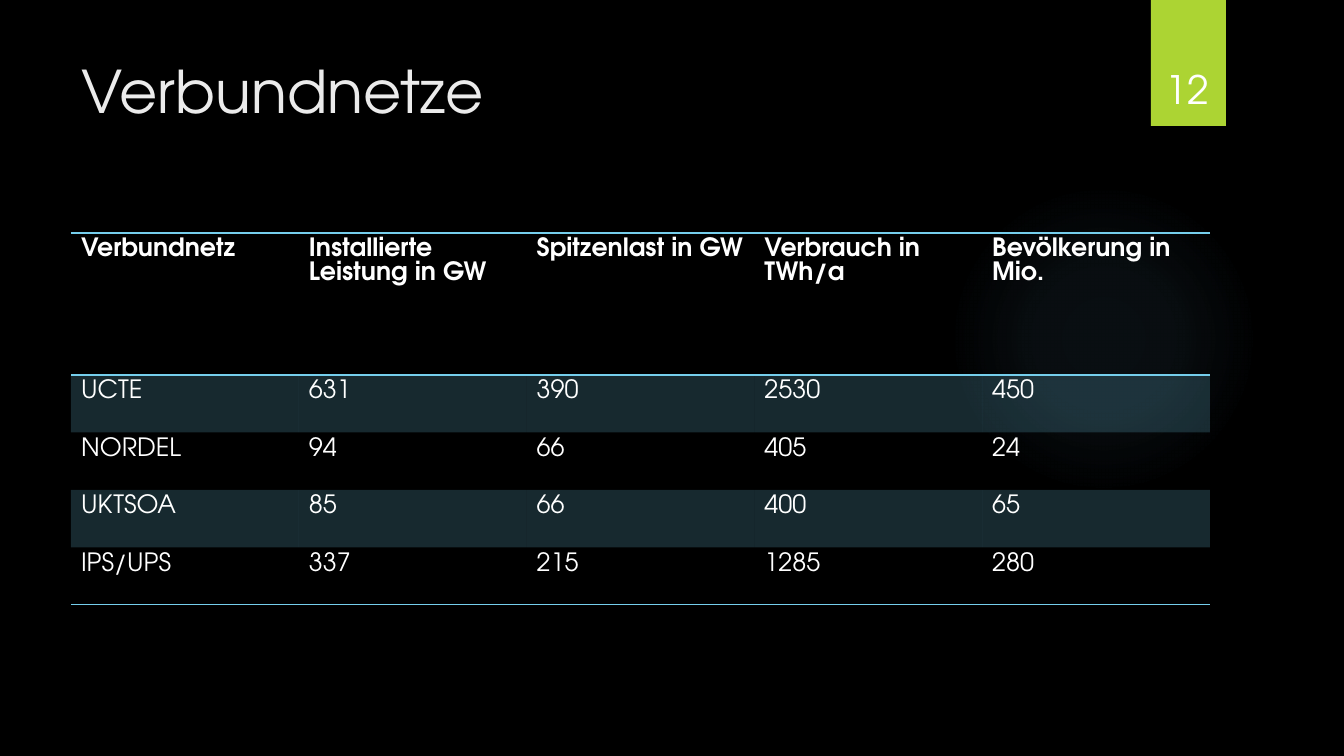
from lxml import etree
from pptx import Presentation, util as u
from pptx.dml.color import RGBColor
from pptx.enum import shapes, text
from pptx.oxml import parse_xml
from pptx.oxml.ns import nsdecls, qn

PX = 914400 / 100.8
FONT = "TeX Gyre Adventor"
ACCENT, WHITE = "75CEEC", "FFFFFF"
NO_GRID = "{2D5ABB26-0587-4C30-8999-92F81FD0307C}"
ROWS = [
    ["Verbundnetz", "Installierte Leistung in GW", "Spitzenlast in GW",
     "Verbrauch in TWh/a", "Bevölkerung in Mio."],
    ["UCTE", "631", "390", "2530", "450"],
    ["NORDEL", "94", "66", "405", "24"],
    ["UKTSOA", "85", "66", "400", "65"],
    ["IPS/UPS", "337", "215", "1285", "280"],
]


def px(n):
    return u.Emu(round(n * PX))


def rgb(color):
    return RGBColor.from_string(color)


def write(tf, words, size, color, bold=False, align=text.PP_ALIGN.LEFT):
    tf.word_wrap = True
    p = tf.paragraphs[0]
    p.alignment = align
    r = p.add_run()
    r.text = words
    for name, value in {"name": FONT, "size": u.Pt(size), "bold": bold}.items():
        setattr(r.font, name, value)
    r.font.color.rgb = rgb(color)


def add_plain_shape(s, kind, box):
    sp = s.shapes.add_shape(kind, *map(px, box))
    sp.shadow.inherit = False
    sp.line.fill.background()
    return sp


def add_glow(s, box):
    sp = add_plain_shape(s, shapes.MSO_SHAPE.OVAL, box)
    stops = "".join(
        f'<a:gs pos="{pos}000"><a:srgbClr val="7AC4F0">'
        f'<a:alpha val="{alpha}000"/></a:srgbClr></a:gs>'
        for pos, alpha in [(0, 7), (36, 6), (69, 0), (100, 0)])
    grad = parse_xml(
        f'<a:gradFill {nsdecls("a")} rotWithShape="1"><a:gsLst>{stops}</a:gsLst>'
        '<a:path path="circle"><a:fillToRect l="50000" t="50000" r="50000" '
        'b="50000"/></a:path></a:gradFill>')
    sp._element.spPr.find(qn("a:prstGeom")).addnext(grad)


def add_page_tab(s, box, number):
    x, y, w, h = box
    sp = add_plain_shape(s, shapes.MSO_SHAPE.RECTANGLE, box)
    sp.fill.solid()
    sp.fill.fore_color.rgb = rgb("ACD433")
    # The number box is wider than the tab and sits low in it
    tf = s.shapes.add_textbox(*map(px, (x - 10, y + 32, w + 18, 85))).text_frame
    tf.vertical_anchor = text.MSO_ANCHOR.BOTTOM
    write(tf, number, 28, WHITE, align=text.PP_ALIGN.CENTER)


def add_title(s, box, words):
    tf = s.shapes.add_textbox(*map(px, box)).text_frame
    write(tf, words, 42, "EBEBEB")


def add_border(cell, side):
    ln = parse_xml(
        f'<a:{side} {nsdecls("a")} w="12700"><a:solidFill>'
        f'<a:srgbClr val="{ACCENT}"/></a:solidFill></a:{side}>')
    tc_pr = cell._tc.get_or_add_tcPr()
    # Borders come before the fill, top before bottom
    tc_pr.insert(len(tc_pr.findall(qn("a:lnT"))), ln)


def fill_cell(cell, banded):
    if not banded:
        cell.fill.background()
        return
    cell.fill.solid()
    cell.fill.fore_color.rgb = rgb(ACCENT)
    clr = cell._tc.tcPr.find(".//" + qn("a:srgbClr"))
    etree.SubElement(clr, qn("a:alpha")).set("val", "20000")


def add_grid_table(s, box, rows, header_height):
    x, y, w, h = box
    last = len(rows) - 1
    frame = s.shapes.add_table(len(rows), len(rows[0]), *map(px, box))
    table = frame.table
    table.first_row = True
    table.horz_banding = False
    table._tbl.tblPr.find(qn("a:tableStyleId")).text = NO_GRID
    for column in table.columns:
        column.width = px(w / len(rows[0]))
    for i, values in enumerate(rows):
        table.rows[i].height = px((h - header_height) / last if i else header_height)
        for j, value in enumerate(values):
            cell = table.cell(i, j)
            write(cell.text_frame, value, 18, WHITE, bold=i == 0)
            fill_cell(cell, i % 2 == 1)
            if i == 0:
                add_border(cell, "lnT")
            if i in (0, last):
                add_border(cell, "lnB")


def main():
    prs = Presentation()
    prs.slide_width, prs.slide_height = px(1344), px(756)
    s = prs.slides.add_slide(prs.slide_layouts[6])
    s.background.fill.solid()
    s.background.fill.fore_color.rgb = rgb("000000")
    add_glow(s, (949, 184, 310, 310))
    add_title(s, (72, 50, 1037, 154), "Verbundnetze")
    add_grid_table(s, (71, 233, 1139, 372), ROWS, 142)
    add_page_tab(s, (1151, 0, 75, 126), "12")
    prs.save("out.pptx")


if __name__ == "__main__":
    main()
